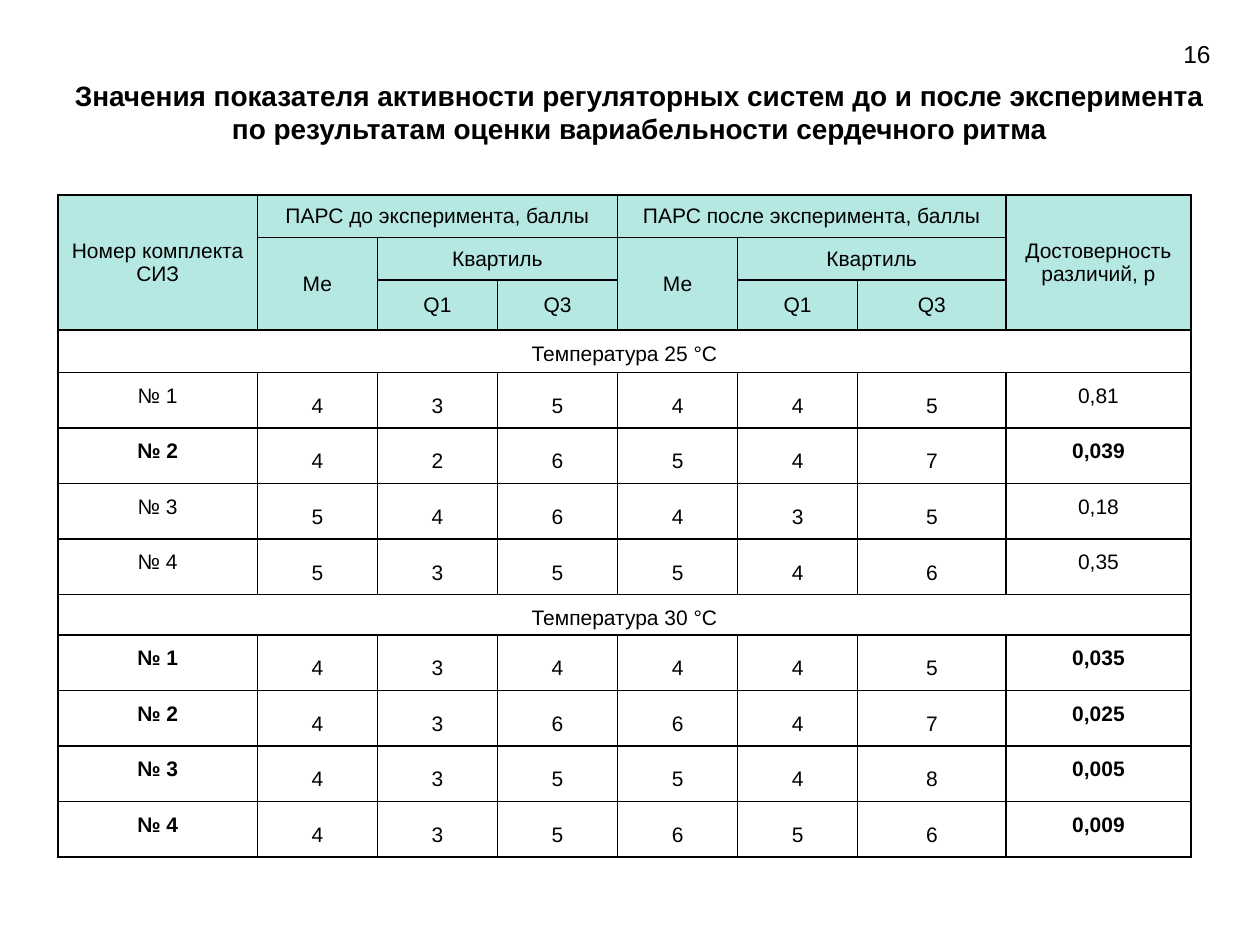
"""Build the slide with the regulatory activity score table."""
from dataclasses import dataclass

from lxml.etree import SubElement
from pptx import Presentation
from pptx.dml.color import RGBColor
from pptx.enum.text import MSO_ANCHOR, MSO_AUTO_SIZE, PP_ALIGN
from pptx.oxml import parse_xml
from pptx.oxml.ns import nsdecls, qn
from pptx.table import Table, _Cell
from pptx.text.text import TextFrame
from pptx.util import Cm, Pt


@dataclass(frozen=True)
class Theme:
    """Hold the colours, font and type sizes."""

    font: str = "Arial"
    ink: str = "000000"
    header: str = "B6E8E3"
    paper: str = "FFFFFF"
    title_size: int = 16
    number_size: int = 14
    table_size: int = 12
    border_width: int = 1


@dataclass(frozen=True)
class HeaderCell:
    """Describe one header cell and its span."""

    row: int
    column: int
    text: str
    rows: int = 1
    columns: int = 1


@dataclass(frozen=True)
class KitResult:
    """Describe the scores of one protective kit."""

    scores: str
    p_value: str

    @property
    def significant(self) -> bool:
        """Tell whether the difference is below the 0.05 level."""
        return float(self.p_value.replace(",", ".")) < 0.05


@dataclass(frozen=True)
class TemperatureGroup:
    """Describe the results at one temperature."""

    heading: str
    height: float
    kits: tuple[KitResult, ...]


THEME = Theme()
TITLE = (
    "Значения показателя активности регуляторных систем до и после эксперимента "
    "по результатам оценки вариабельности сердечного ритма"
)
COLUMN_WIDTHS = (4.02, *[2.42] * 5, 2.99, 3.73)
HEADER_HEIGHTS = (0.86, 0.85, 1.01)
KIT_HEIGHT = 1.12
PHASES = (
    (1, "ПАРС до эксперимента, баллы"),
    (4, "ПАРС после эксперимента, баллы"),
)
GROUPS = (
    TemperatureGroup("Температура 25 °С", 0.85, (
        KitResult("435445", "0,81"),
        KitResult("426547", "0,039"),
        KitResult("546435", "0,18"),
        KitResult("535546", "0,35"),
    )),
    TemperatureGroup("Температура 30 °С", 0.81, (
        KitResult("434445", "0,035"),
        KitResult("436647", "0,025"),
        KitResult("435548", "0,005"),
        KitResult("435656", "0,009"),
    )),
)


def write_text(frame: TextFrame, text: str, *, size: int, bold: bool = False,
               spacing: float = 1.0) -> None:
    """Write one centred paragraph into a text frame."""
    frame.word_wrap = True
    para = frame.paragraphs[0]
    para.alignment = PP_ALIGN.CENTER
    para.line_spacing = spacing
    span = para.add_run()
    span.text = text
    span.font.name = THEME.font
    span.font.size = Pt(size)
    span.font.bold = bold
    span.font.color.rgb = RGBColor.from_string(THEME.ink)


def style_cell(cell: _Cell, fill: str) -> None:
    """Set the margins, fill and four borders of a cell."""
    cell.margin_left = cell.margin_right = Cm(0.18)
    cell.margin_top = cell.margin_bottom = 0
    cell.fill.solid()
    cell.fill.fore_color.rgb = RGBColor.from_string(fill)
    properties = cell._tc.get_or_add_tcPr()
    for index, side in enumerate("LRTB"):
        line = parse_xml(f'<a:ln{side} {nsdecls("a")} w="{Pt(THEME.border_width)}"/>')
        solid = SubElement(line, qn("a:solidFill"))
        SubElement(solid, qn("a:srgbClr"), val=THEME.ink)
        properties.insert(index, line)


def write_cell(cell: _Cell, text: str, *, bold: bool = False, spacing: float = 1.5,
               anchor: MSO_ANCHOR = MSO_ANCHOR.MIDDLE) -> None:
    """Write text into a table cell."""
    cell.vertical_anchor = anchor
    write_text(cell.text_frame, text, size=THEME.table_size, bold=bold, spacing=spacing)


def header_cells() -> list[HeaderCell]:
    """List the header cells, repeating the score columns for each phase."""
    last = len(COLUMN_WIDTHS) - 1
    cells = [
        HeaderCell(0, 0, "Номер комплекта СИЗ", rows=3),
        HeaderCell(0, last, "Достоверность различий, р", rows=3),
    ]
    for column, phase in PHASES:
        cells += [
            HeaderCell(0, column, phase, columns=3),
            HeaderCell(1, column, "Ме", rows=2),
            HeaderCell(1, column + 1, "Квартиль", columns=2),
            HeaderCell(2, column + 1, "Q1"),
            HeaderCell(2, column + 2, "Q3"),
        ]
    return cells


def draw_header(table: Table) -> None:
    """Merge and fill the header cells."""
    for header in header_cells():
        cell = table.cell(header.row, header.column)
        if header.rows * header.columns > 1:
            cell.merge(table.cell(header.row + header.rows - 1,
                                  header.column + header.columns - 1))
        write_cell(cell, header.text, spacing=1.0)


def draw_group(table: Table, top: int, group: TemperatureGroup) -> None:
    """Write a temperature heading and its kit rows."""
    last = len(COLUMN_WIDTHS) - 1
    heading = table.cell(top, 0)
    heading.merge(table.cell(top, last))
    write_cell(heading, group.heading, anchor=MSO_ANCHOR.TOP)
    for number, kit in enumerate(group.kits, start=1):
        row = top + number
        for column, text in ((0, f"№ {number}"), (last, kit.p_value)):
            write_cell(table.cell(row, column), text, bold=kit.significant,
                       anchor=MSO_ANCHOR.TOP)
        for column, score in enumerate(kit.scores, start=1):
            write_cell(table.cell(row, column), score)


def draw_table(slide) -> None:
    """Add the score table to the slide."""
    heights = list(HEADER_HEIGHTS)
    for group in GROUPS:
        heights += [group.height, *[KIT_HEIGHT] * len(group.kits)]
    table = slide.shapes.add_table(
        len(heights), len(COLUMN_WIDTHS), Cm(1.17), Cm(3.93),
        Cm(sum(COLUMN_WIDTHS)), Cm(sum(heights))).table
    table.first_row = table.horz_banding = False
    for column, width in zip(table.columns, COLUMN_WIDTHS):
        column.width = Cm(width)
    for index, (row, height) in enumerate(zip(table.rows, heights)):
        row.height = Cm(height)
        for cell in row.cells:
            style_cell(cell, THEME.header if index < len(HEADER_HEIGHTS) else THEME.paper)
    draw_header(table)
    top = len(HEADER_HEIGHTS)
    for group in GROUPS:
        draw_group(table, top, group)
        top += len(group.kits) + 1


def main() -> None:
    """Create and save the deck."""
    deck = Presentation()
    deck.slide_width, deck.slide_height = Cm(25.4), Cm(19.05)
    page = deck.slides.add_slide(deck.slide_layouts[5])
    title = page.shapes.title
    title.left, title.top, title.width, title.height = Cm(1.22), Cm(1.45), Cm(23.34), Cm(1.63)
    title.text_frame.vertical_anchor = MSO_ANCHOR.TOP
    write_text(title.text_frame, TITLE, size=THEME.title_size, bold=True)
    title.text_frame.auto_size = MSO_AUTO_SIZE.SHAPE_TO_FIT_TEXT
    box = page.shapes.add_textbox(Cm(23.52), Cm(0.66), Cm(1.22), Cm(0.79))
    write_text(box.text_frame, "16", size=THEME.number_size)
    draw_table(page)
    deck.save("out.pptx")


if __name__ == "__main__":
    main()
